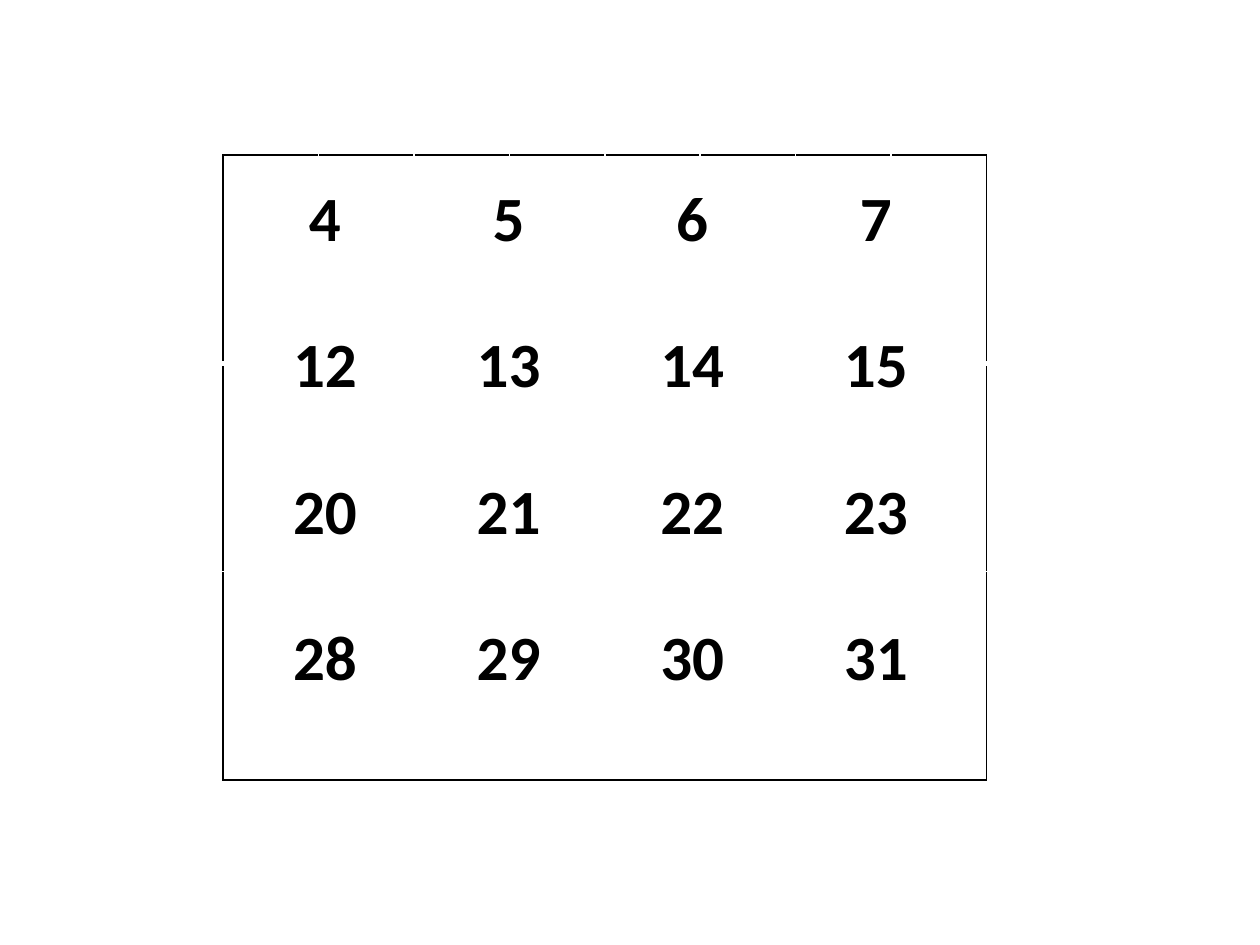
from dataclasses import dataclass

from lxml import etree
from pptx import Presentation
from pptx.dml.color import RGBColor
from pptx.enum import text
from pptx.oxml import ns
from pptx.util import Inches, Pt


@dataclass(frozen=True)
class Theme:
    ink: str = "000000"
    paper: str = "FFFFFF"
    font: str = "Calibri"
    number_size: int = 36
    thin: int = 1
    thick: int = 3


THEME = Theme()


def set_borders(cell, **sides):
    """Draw the sides L, R, T and B, each given as (colour, points)."""
    properties = cell._tc.get_or_add_tcPr()
    for index, side in enumerate("LRTB"):
        colour, points = sides[side]
        line = etree.Element(ns.qn(f"a:ln{side}"), w=str(Pt(points)))
        fill = etree.SubElement(line, ns.qn("a:solidFill"))
        etree.SubElement(fill, ns.qn("a:srgbClr"), val=colour)
        properties.insert(index, line)


def add_plain_table(page, box, rows, columns):
    left, top, width, height = map(Inches, box)
    table = page.shapes.add_table(rows, columns, left, top, width, height).table
    table.first_row = False
    table.horz_banding = False
    for cell in table.iter_cells():
        cell.fill.background()
    return table


def add_frame(page, box, rows=3, columns=8):
    """Place an empty grid of which only the outer edge is dark."""
    table = add_plain_table(page, box, rows, columns)
    edge = (THEME.ink, THEME.thin)
    inner = (THEME.paper, THEME.thin)
    header_rule = (THEME.paper, THEME.thick)
    for row in range(rows):
        bottom = {0: header_rule, rows - 1: edge}.get(row, inner)
        for column in range(columns):
            set_borders(
                table.cell(row, column),
                L=edge if column == 0 else inner,
                R=edge if column == columns - 1 else inner,
                T=edge if row == 0 else inner,
                B=bottom,
            )


def add_numbers(page, box, rows=4, columns=4, first=4, row_step=8):
    table = add_plain_table(page, box, rows, columns)
    inner = (THEME.paper, THEME.thin)
    header_rule = (THEME.paper, THEME.thick)
    for row in range(rows):
        for column in range(columns):
            cell = table.cell(row, column)
            set_borders(cell, L=inner, R=inner, T=inner,
                        B=header_rule if row == 0 else inner)
            para = cell.text_frame.paragraphs[0]
            para.alignment = text.PP_ALIGN.CENTER
            span = para.add_run()
            span.text = str(first + row * row_step + column)
            span.font.name = THEME.font
            span.font.size = Pt(THEME.number_size)
            span.font.bold = True
            span.font.color.rgb = RGBColor.from_string(THEME.ink)


def main():
    deck = Presentation()
    deck.slide_width, deck.slide_height = Inches(10), Inches(7.5)
    page = deck.slides.add_slide(deck.slide_layouts[6])
    add_frame(page, (1.77, 1.23, 6.06, 4.96))
    add_numbers(page, (1.85, 1.39, 5.83, 4.65))
    deck.save("out.pptx")


if __name__ == "__main__":
    main()
